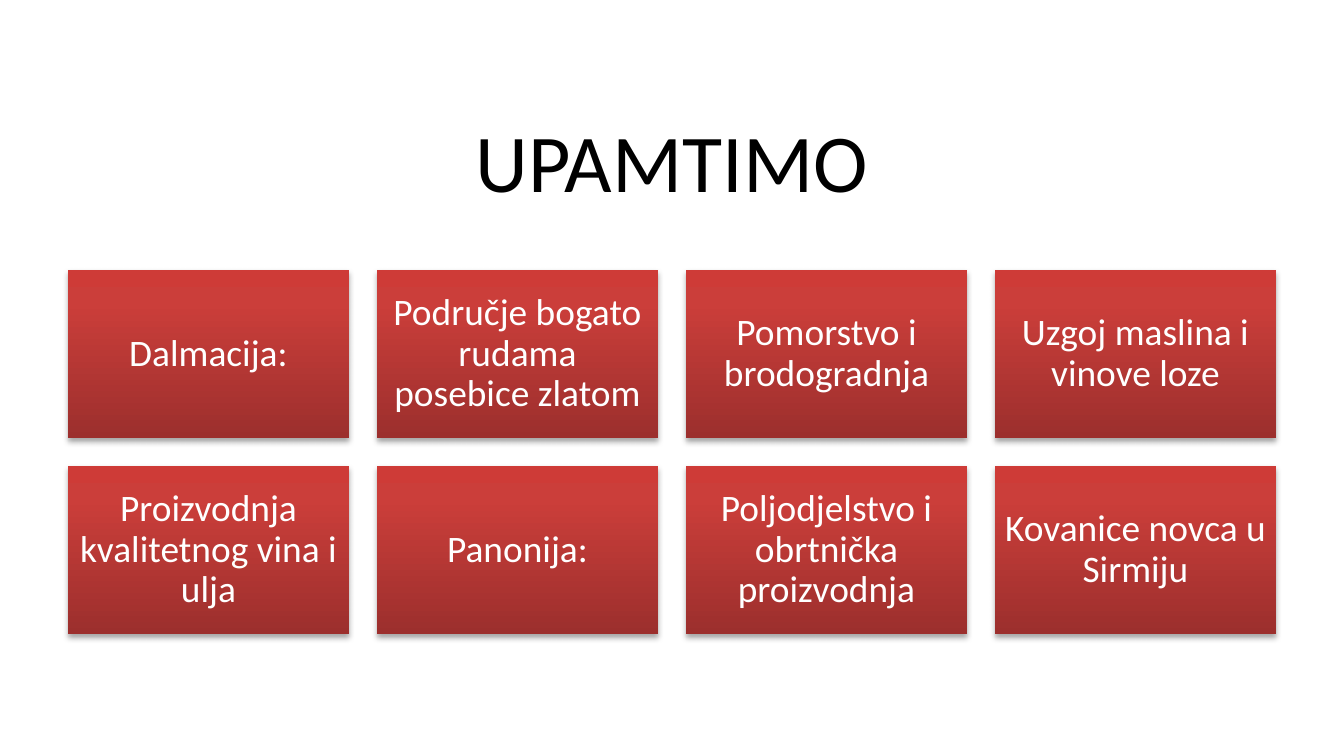
"""Build the UPAMTIMO summary slide: a title above a grid of eight tiles."""
from copy import deepcopy
from dataclasses import dataclass

from lxml.etree import SubElement as Child
from pptx import Presentation
from pptx.dml.color import RGBColor as Rgb
from pptx.enum.shapes import MSO_SHAPE as Shape
from pptx.enum.text import MSO_ANCHOR as Anchor, PP_ALIGN as Align
from pptx.oxml.ns import qn
from pptx.util import Emu, Pt

EMU_PER_PX = 914400 / 134.4
COLUMNS = 4
LEFT, TOP = 68, 270
TILE_WIDTH, TILE_HEIGHT, GAP = 281, 168, 28

TILES = [
    "Dalmacija:",
    "Područje bogato rudama posebice zlatom",
    "Pomorstvo i brodogradnja",
    "Uzgoj maslina i vinove loze",
    "Proizvodnja kvalitetnog vina i ulja",
    "Panonija:",
    "Poljodjelstvo i obrtnička proizvodnja",
    "Kovanice novca u Sirmiju",
]


@dataclass(frozen=True)
class Theme:
    font: str = "Calibri"
    title_size: int = 44
    tile_size: int = 20
    title_color: str = "000000"
    tile_color: str = "FFFFFF"
    shadow_color: str = "000000"
    gradient: tuple = ((0, "9C2F2D"), (0.8, "CB3E3A"), (1, "CE3B37"))


def px(value):
    return Emu(round(value * EMU_PER_PX))


class SlideBuilder:
    def __init__(self, page, theme):
        self.page = page
        self.theme = theme

    def set_text(self, box, text, size, color, inset):
        frame = box.text_frame
        frame.text = text
        margins = ("margin_left", "margin_top", "margin_right", "margin_bottom")
        frame_format = dict.fromkeys(margins, px(inset))
        frame_format.update(word_wrap=True, vertical_anchor=Anchor.MIDDLE)
        para = frame.paragraphs[0]
        font = para.runs[0].font
        formats = (
            (frame, frame_format),
            (para, {"alignment": Align.CENTER, "line_spacing": 0.9}),
            (font, {"name": self.theme.font, "size": Pt(size)}),
            (font.color, {"rgb": Rgb.from_string(color)}),
        )
        for target, values in formats:
            for name, value in values.items():
                setattr(target, name, value)

    def title(self, text, left, top, width, height):
        box = self.page.shapes.title
        place = {"left": left, "top": top, "width": width, "height": height}
        for name, value in place.items():
            setattr(box, name, px(value))
        self.set_text(box, text, self.theme.title_size, self.theme.title_color, 7)

    def tile(self, text, left, top):
        box = self.page.shapes.add_shape(
            Shape.RECTANGLE, px(left), px(top), px(TILE_WIDTH), px(TILE_HEIGHT))
        box.line.fill.background()
        self.shade(box)
        self.cast_shadow(box)
        self.set_text(box, text, self.theme.tile_size, self.theme.tile_color, 10)

    def shade(self, box):
        box.fill.gradient()
        box.fill.gradient_angle = 90
        stops = next(box.element.spPr.iter(qn("a:gsLst")))
        stops.insert(1, deepcopy(stops[0]))
        for stop, (position, color) in zip(box.fill.gradient_stops, self.theme.gradient):
            stop.position = position
            stop.color.rgb = Rgb.from_string(color)

    def cast_shadow(self, box):
        box.shadow.inherit = False
        effects = box.element.spPr.find(qn("a:effectLst"))
        shadow = Child(effects, qn("a:outerShdw"), blurRad=str(Pt(3.1)),
                       dist=str(Pt(1.8)), dir="5400000", rotWithShape="0")
        color = Child(shadow, qn("a:srgbClr"), val=self.theme.shadow_color)
        Child(color, qn("a:alpha"), val="35000")


def main():
    deck = Presentation()
    deck.slide_width, deck.slide_height = px(1344), px(756)
    page = deck.slides.add_slide(deck.slide_layouts.get_by_name("Title Only"))
    builder = SlideBuilder(page, Theme())
    builder.title("UPAMTIMO", 67, 113, 1210, 105)
    for index, text in enumerate(TILES):
        row, column = divmod(index, COLUMNS)
        builder.tile(text, LEFT + column * (TILE_WIDTH + GAP),
                     TOP + row * (TILE_HEIGHT + GAP))
    deck.save("out.pptx")


if __name__ == "__main__":
    main()
